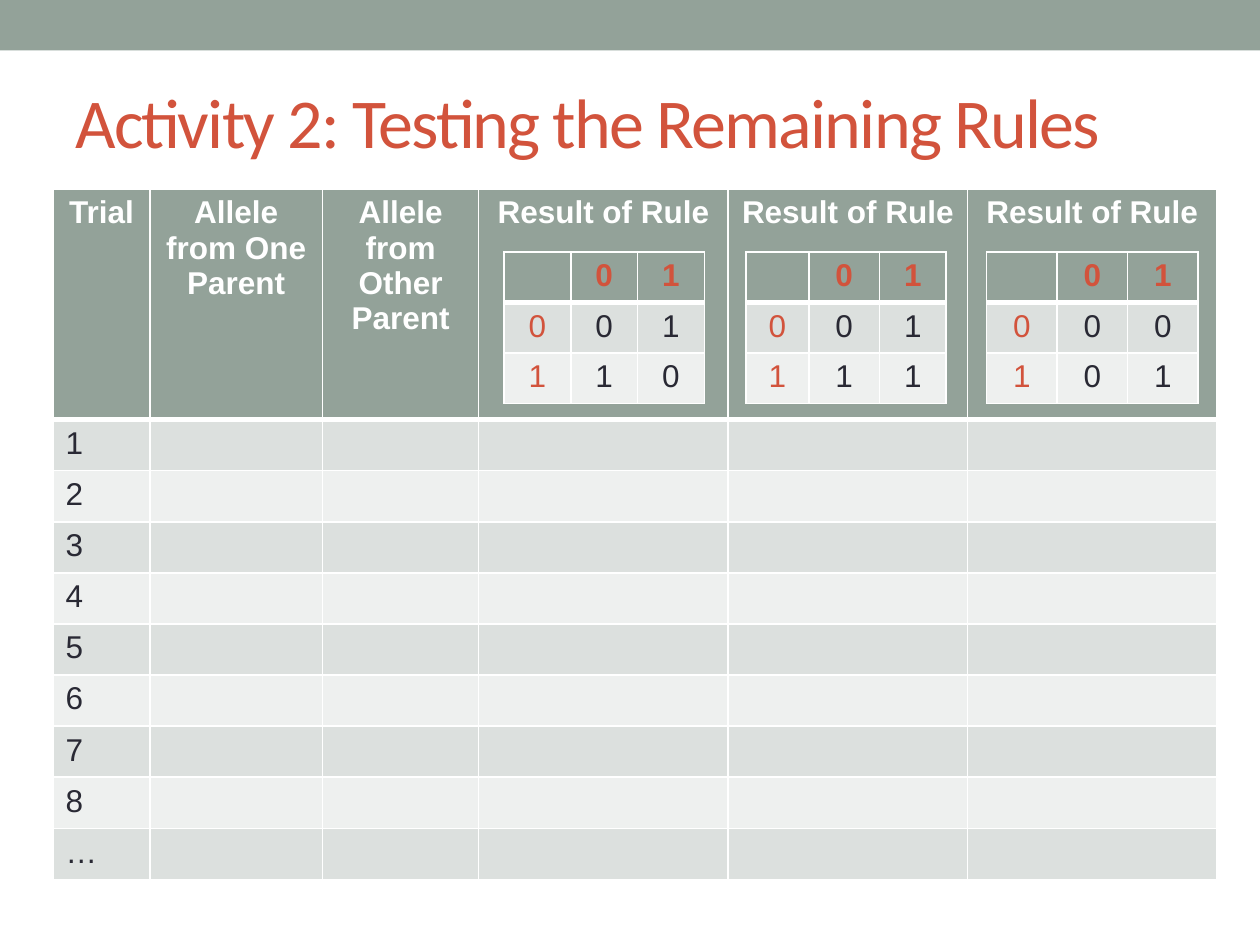
"""Build the slide for testing the remaining inheritance rules."""
from lxml import etree
from pptx import Presentation
from pptx import util as u
from pptx.dml import color
from pptx.enum import shapes, text
from pptx.oxml import ns

COLORS = {"sage": "93A299", "red": "D2533C", "ink": "292934",
          "white": "FFFFFF", "odd": "DCE0DE", "even": "EEF0EF"}


def rgb(name):
    return color.RGBColor.from_string(COLORS[name])


def write(frame, words, ink, align=text.PP_ALIGN.LEFT, **font):
    para = frame.paragraphs[0]
    para.alignment = align
    span = para.add_run()
    span.text = words
    span.font.color.rgb = rgb(ink)
    for name, value in font.items():
        setattr(span.font, name, value)
    return span


def add_band(page):
    band = page.shapes.add_shape(shapes.MSO_SHAPE.RECTANGLE, 0, 0, u.Inches(10), u.Inches(0.4))
    band.shadow.inherit = False
    band.fill.solid()
    band.fill.fore_color.rgb = rgb("sage")
    band.line.fill.background()


def add_title(page, words):
    box = page.shapes.add_textbox(u.Inches(0.5), u.Inches(0.42), u.Inches(9), u.Inches(1.08))
    box.text_frame.word_wrap = True
    box.text_frame.vertical_anchor = text.MSO_ANCHOR.MIDDLE
    span = write(box.text_frame, words, "red", name="Calibri", size=u.Pt(40))
    span.font._element.set("spc", "-100")


def set_borders(cell, widths):
    props = cell._tc.get_or_add_tcPr()
    for index, (side, width) in enumerate(widths.items()):
        line = etree.Element(ns.qn(f"a:ln{side}"), w=str(u.Pt(width)))
        fill = etree.SubElement(line, ns.qn("a:solidFill"))
        etree.SubElement(fill, ns.qn("a:srgbClr"), val=COLORS["white"])
        props.insert(index, line)


def add_grid(page, left, top, widths, heights, rows, style):
    frame = page.shapes.add_table(len(rows), len(widths), u.Inches(left), u.Inches(top),
                                  u.Inches(sum(widths)), u.Inches(sum(heights)))
    table = frame.table
    for column, width in zip(table.columns, widths):
        column.width = u.Inches(width)
    for row, height in zip(table.rows, heights):
        row.height = u.Inches(height)
    for r, row in enumerate(rows):
        for c, words in enumerate(row):
            cell = table.cell(r, c)
            cell.fill.solid()
            cell.fill.fore_color.rgb = rgb("sage" if r == 0 else "odd" if r % 2 else "even")
            set_borders(cell, {"L": 1, "R": 1, "T": 3 if r == 1 else 1, "B": 3 if r == 0 else 1})
            if words:
                ink, align = style(r, c)
                write(cell.text_frame, words, ink, align,
                      name="Arial", size=u.Pt(18), bold=r == 0)


def trial_style(row, column):
    if row == 0:
        return "white", text.PP_ALIGN.CENTER
    return "ink", text.PP_ALIGN.LEFT


def rule_style(row, column):
    return "ink" if row and column else "red", text.PP_ALIGN.CENTER


def add_trials(page):
    header = ["Trial", "Allele from One Parent", "Allele from Other Parent"] + ["Result of Rule"] * 3
    rows = [header] + [[label] + [""] * 5 for label in "12345678…"]
    heights = [1.83] + [3.65 / 9] * 9
    add_grid(page, 0.42, 1.5, [0.77, 1.37, 1.24, 1.98, 1.9, 1.98], heights, rows, trial_style)


def add_rule(page, left, widths, height, results):
    rows = [["", "0", "1"]] + [[allele, *pair] for allele, pair in zip("01", results)]
    add_grid(page, left, 2, widths, [height] * 3, rows, rule_style)


def main():
    deck = Presentation()
    deck.slide_width, deck.slide_height = u.Inches(10), u.Inches(7.5)
    page = deck.slides.add_slide(deck.slide_layouts[6])
    add_band(page)
    add_title(page, "Activity 2: Testing the Remaining Rules")
    add_trials(page)
    add_rule(page, 4, [0.53] * 3, 0.38, ["01", "10"])
    add_rule(page, 5.92, [0.5, 0.56, 0.53], 0.39, ["01", "11"])
    add_rule(page, 7.83, [0.56] * 3, 0.39, ["00", "01"])
    deck.save("out.pptx")


if __name__ == "__main__":
    main()
